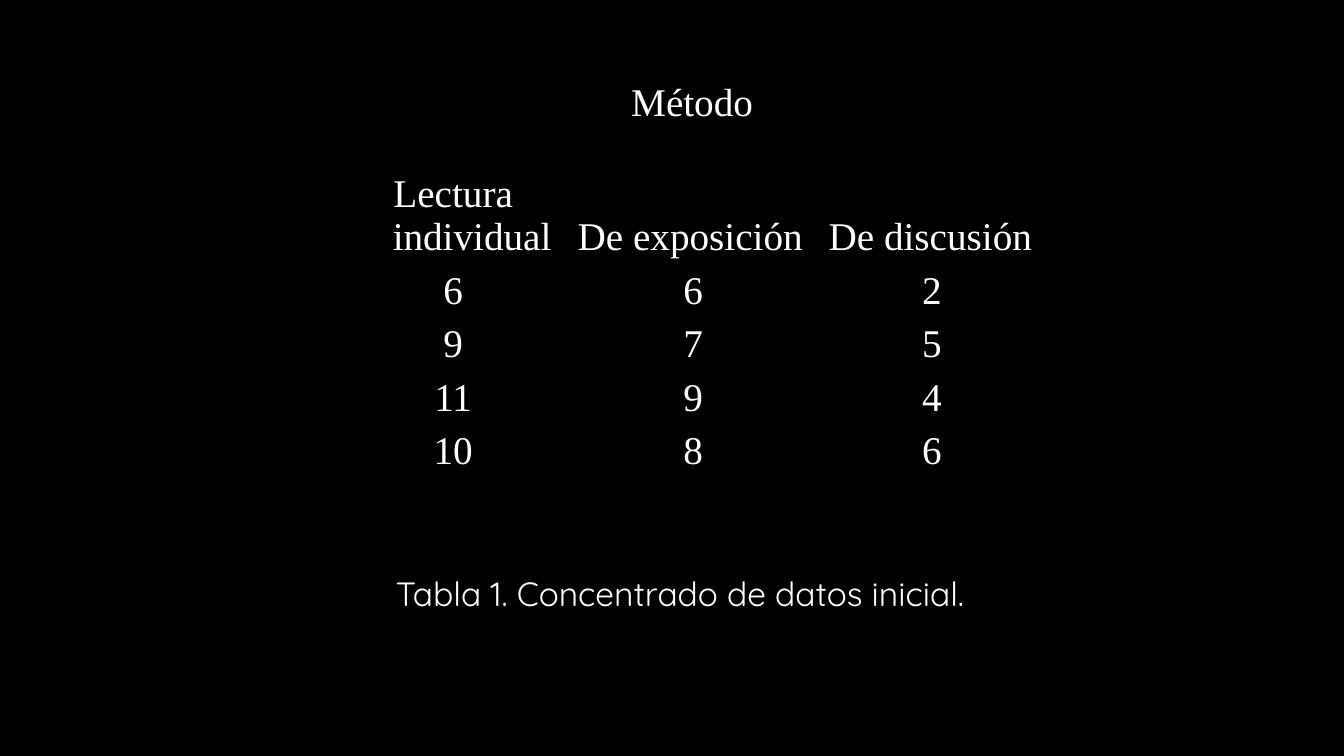
from dataclasses import dataclass

import lxml.etree
import pptx
import pptx.dml.color
import pptx.enum.text
import pptx.oxml.ns
import pptx.util

Pt = pptx.util.Pt
Align = pptx.enum.text.PP_ALIGN
Anchor = pptx.enum.text.MSO_ANCHOR


@dataclass(frozen=True)
class Theme:
    back: str = "000000"
    ink: str = "FFFFFF"
    serif: str = "Times New Roman"
    sans: str = "Quicksand"
    cell: float = 28
    note: float = 24
    edge: float = 1


@dataclass(frozen=True)
class Entry:
    row: int
    col: int
    text: str
    align: Align = Align.CENTER


THEME = Theme()
WIDTHS = (163.5, 179.25, 162)
HEIGHTS = (37.5, 95.75) + (37.5,) * 4
HEADS = (
    Entry(0, 0, "Método"),
    Entry(1, 0, "Lectura individual"),
    Entry(1, 1, "De exposición", Align.LEFT),
    Entry(1, 2, "De discusión", Align.LEFT),
)
SCORES = ((6, 6, 2), (9, 7, 5), (11, 9, 4), (10, 8, 6))


def write(frame, text: str, *, font: str, size: float,
          align: Align = Align.LEFT, hang: float = 0) -> None:
    para = frame.paragraphs[0]
    para.alignment = align
    if hang:
        props = para._p.get_or_add_pPr()
        props.set("marL", str(Pt(hang)))
        props.set("indent", str(-Pt(hang)))
    run = para.add_run()
    run.text = text
    run.font.name = font
    run.font.size = Pt(size)
    run.font.color.rgb = pptx.dml.color.RGBColor.from_string(THEME.ink)


def frame_cell(cell) -> None:
    qn = pptx.oxml.ns.qn
    props = cell._tc.get_or_add_tcPr()
    for side in ("lnL", "lnR", "lnT", "lnB"):
        line = lxml.etree.SubElement(props, qn(f"a:{side}"), w=str(Pt(THEME.edge)))
        fill = lxml.etree.SubElement(line, qn("a:solidFill"))
        lxml.etree.SubElement(fill, qn("a:srgbClr"), val=THEME.back)
    cell.fill.background()
    cell.vertical_anchor = Anchor.BOTTOM


def draw_table(slide) -> None:
    table = slide.shapes.add_table(
        len(HEIGHTS), len(WIDTHS), Pt(242), Pt(54.75),
        Pt(sum(WIDTHS)), Pt(sum(HEIGHTS))).table
    table.first_row = False
    table.horz_banding = False
    for col, width in zip(table.columns, WIDTHS):
        col.width = Pt(width)
    for row, height in zip(table.rows, HEIGHTS):
        row.height = Pt(height)
    for cell in table.iter_cells():
        frame_cell(cell)
    table.cell(0, 0).merge(table.cell(0, len(WIDTHS) - 1))
    body = tuple(Entry(row, col, str(score))
                 for row, scores in enumerate(SCORES, 2)
                 for col, score in enumerate(scores))
    for item in HEADS + body:
        write(table.cell(item.row, item.col).text_frame, item.text,
              font=THEME.serif, size=THEME.cell, align=item.align, hang=27)


def draw_note(slide) -> None:
    box = slide.shapes.add_textbox(Pt(275.75), Pt(406), Pt(465), Pt(36))
    frame = box.text_frame
    frame.word_wrap = True
    frame.auto_size = pptx.enum.text.MSO_AUTO_SIZE.SHAPE_TO_FIT_TEXT
    write(frame, "Tabla 1. Concentrado de datos inicial.",
          font=THEME.sans, size=THEME.note)


def main() -> None:
    deck = pptx.Presentation()
    deck.slide_width, deck.slide_height = Pt(960), Pt(540)
    slide = deck.slides.add_slide(deck.slide_layouts[6])
    fill = slide.background.fill
    fill.solid()
    fill.fore_color.rgb = pptx.dml.color.RGBColor.from_string(THEME.back)
    draw_table(slide)
    draw_note(slide)
    deck.save("out.pptx")


if __name__ == "__main__":
    main()
